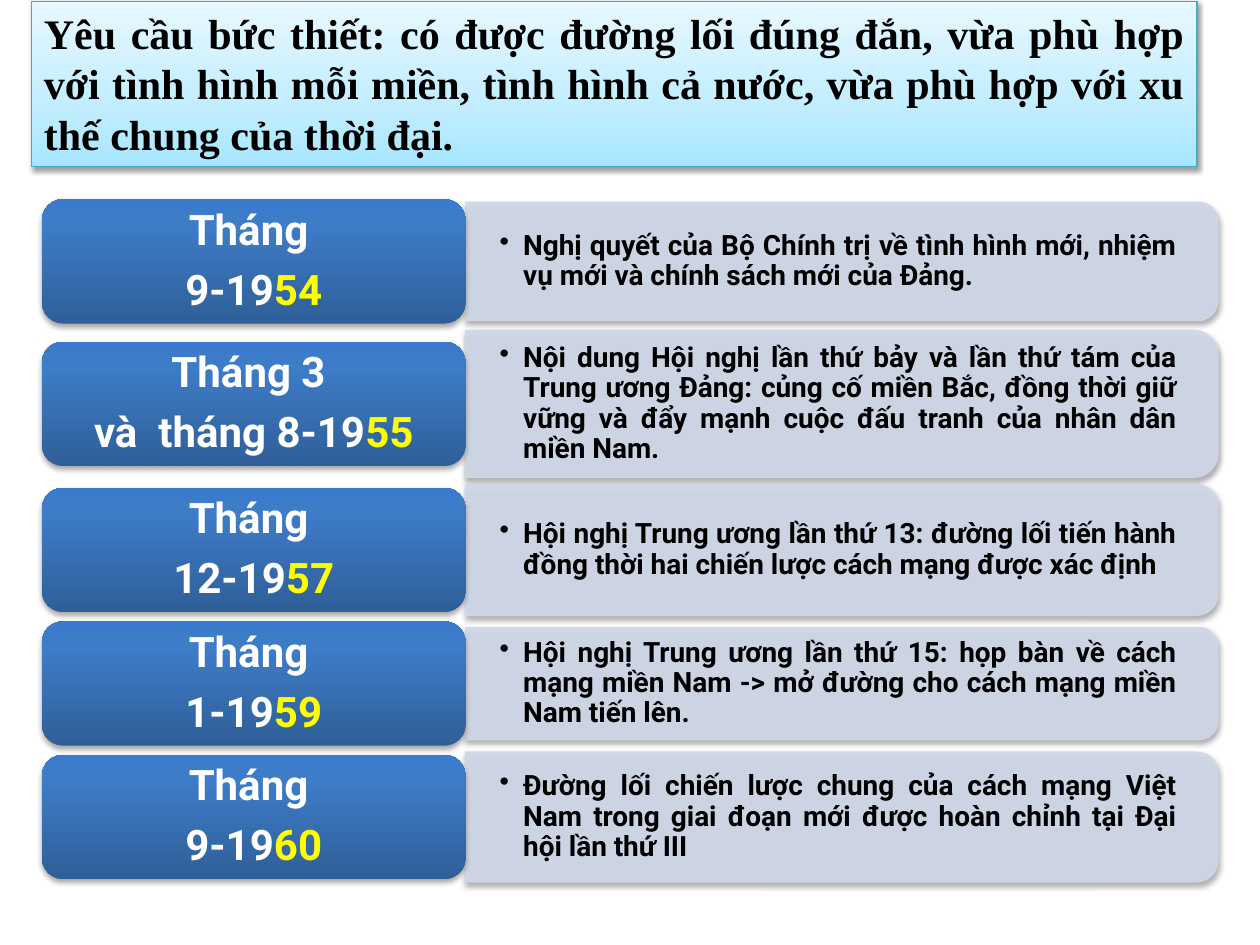
from lxml.etree import SubElement as add_child
from pptx import Presentation
from pptx.dml.color import RGBColor
from pptx.enum.shapes import MSO_SHAPE as Preset
from pptx.enum.text import MSO_ANCHOR as Anchor, PP_ALIGN as Align
from pptx.oxml.ns import qn
from pptx.util import Pt

LABEL_LEFT, LABEL_WIDTH, LABEL_HEIGHT = 24, 242, 71
PANEL_LEFT, PANEL_WIDTH = 266, 430
BLUE_STOPS = [(0, "2F5F99"), (80, "3D7CC7"), (100, "3A7CCB")]
TITLE_STOPS = [(0, "A7E6FF"), (35, "C1EDFF"), (100, "E7F8FF")]
TITLE = ("Yêu cầu bức thiết: có được đường lối đúng đắn, vừa phù hợp với tình hình "
         "mỗi miền, tình hình cả nước, vừa phù hợp với xu thế chung của thời đại.")

# Middle of the row, panel height, first label line, date, highlighted year, event
ROWS = [
    (149.4, 67.7, "Tháng ", "9-19", "54",
     "Nghị quyết của Bộ Chính trị về tình hình mới, nhiệm vụ mới và chính sách "
     "mới của Đảng."),
    (230.8, 84.2, "Tháng 3 ", "và  tháng 8-19", "55",
     "Nội dung Hội nghị lần thứ bảy và lần thứ tám của Trung ương Đảng: củng cố "
     "miền Bắc, đồng thời giữ vững và đẩy mạnh cuộc đấu tranh của nhân dân miền Nam."),
    (314.3, 74.9, "Tháng ", "12-19", "57",
     "Hội nghị Trung ương lần thứ 13: đường lối tiến hành đồng thời hai chiến lược "
     "cách mạng được xác định"),
    (390.6, 64.1, "Tháng ", "1-19", "59",
     "Hội nghị Trung ương lần thứ 15: họp bàn về cách mạng miền Nam -> mở đường cho "
     "cách mạng miền Nam tiến lên."),
    (466.9, 74.2, "Tháng ", "9-19", "60",
     "Đường lối chiến lược chung của cách mạng Việt Nam trong giai đoạn mới được "
     "hoàn chỉnh tại Đại hội lần thứ III"),
]


def color(value):
    return RGBColor.from_string(value)


def add_span(para, text, size, value, font="Roboto"):
    span = para.add_run()
    span.text = text
    span.font.name = font
    span.font.size = Pt(size)
    span.font.bold = True
    span.font.color.rgb = color(value)


def set_gradient(shape, stops):
    """Fill the shape with stops that run from bottom to top."""
    shape.fill.gradient()
    shape.fill.gradient_angle = 90
    stop_list = next(shape._element.spPr.iter(qn("a:gsLst")))
    for stop in list(stop_list):
        stop_list.remove(stop)
    for percent, value in stops:
        stop = add_child(stop_list, qn("a:gs"), pos=str(percent * 1000))
        add_child(stop, qn("a:srgbClr"), val=value)


def set_shadow(shape, distance, opacity):
    shape.shadow.inherit = False
    effects = shape._element.spPr.find(qn("a:effectLst"))
    shadow = add_child(effects, qn("a:outerShdw"), blurRad=str(Pt(3.1)),
                       dist=str(Pt(distance)), dir="5400000", rotWithShape="0")
    tint = add_child(shadow, qn("a:srgbClr"), val="000000")
    add_child(tint, qn("a:alpha"), val=str(opacity * 1000))


def add_title(page):
    title = page.shapes.add_shape(Preset.RECTANGLE, Pt(18), Pt(0.7), Pt(666), Pt(94.3))
    set_gradient(title, TITLE_STOPS)
    title.line.color.rgb = color("46AAC5")
    title.line.width = Pt(0.75)
    set_shadow(title, 1.6, 38)
    frame = title.text_frame
    frame.word_wrap = True
    frame.vertical_anchor = Anchor.TOP
    para = frame.paragraphs[0]
    para.alignment = Align.JUSTIFY
    add_span(para, TITLE, 24, "000000", "Times New Roman")


def add_panel(page, middle, height):
    # A quarter turn puts the two rounded corners on the right
    left = PANEL_LEFT + (PANEL_WIDTH - height) / 2
    panel = page.shapes.add_shape(Preset.ROUND_2_SAME_RECTANGLE, Pt(left),
                                  Pt(middle - PANEL_WIDTH / 2), Pt(height), Pt(PANEL_WIDTH))
    panel.rotation = 90
    panel.fill.solid()
    panel.fill.fore_color.rgb = color("D0D8E8")
    panel.line.color.rgb = color("D0D8E8")
    panel.line.width = Pt(0.75)
    for tint in panel._element.spPr.iter(qn("a:srgbClr")):
        add_child(tint, qn("a:alpha"), val="90000")
    set_shadow(panel, 1.8, 35)


def add_event(page, middle, panel_height, text):
    height = panel_height - 7
    box = page.shapes.add_textbox(Pt(PANEL_LEFT), Pt(middle - height / 2),
                                  Pt(PANEL_WIDTH - 4), Pt(height))
    frame = box.text_frame
    frame.word_wrap = True
    frame.vertical_anchor = Anchor.MIDDLE
    frame.margin_left = frame.margin_right = Pt(19.5)
    frame.margin_top = frame.margin_bottom = Pt(10)
    para = frame.paragraphs[0]
    para.level = 1
    para.alignment = Align.JUSTIFY
    para.line_spacing = 0.9
    para.space_after = Pt(2.4)
    add_span(para, text, 16, "000000")
    # Hanging bullet
    properties = para._p.get_or_add_pPr()
    properties.set("marL", str(Pt(13.5)))
    properties.set("indent", str(Pt(-13.5)))
    add_child(properties, qn("a:buChar"), char="•")


def add_label(page, middle, first_line, date, year):
    label = page.shapes.add_shape(Preset.ROUNDED_RECTANGLE, Pt(LABEL_LEFT),
                                  Pt(middle - LABEL_HEIGHT / 2),
                                  Pt(LABEL_WIDTH), Pt(LABEL_HEIGHT))
    set_gradient(label, BLUE_STOPS)
    label.line.fill.background()
    set_shadow(label, 1.8, 35)
    frame = label.text_frame
    frame.word_wrap = True
    frame.vertical_anchor = Anchor.MIDDLE
    lines = [[(first_line, "FFFFFF")], [(date, "FFFFFF"), (year, "FFFF00")]]
    for index, spans in enumerate(lines):
        para = frame.add_paragraph() if index else frame.paragraphs[0]
        para.alignment = Align.CENTER
        para.line_spacing = 0.9
        para.space_after = Pt(8.4)
        for text, value in spans:
            add_span(para, text, 24, value)


def main():
    deck = Presentation()
    deck.slide_width, deck.slide_height = Pt(720), Pt(540)
    page = deck.slides.add_slide(deck.slide_layouts[6])

    add_title(page)

    # Timeline rows
    for middle, height, first_line, date, year, event in ROWS:
        add_panel(page, middle, height)
        add_event(page, middle, height, event)
        add_label(page, middle, first_line, date, year)

    deck.save("out.pptx")


if __name__ == "__main__":
    main()
